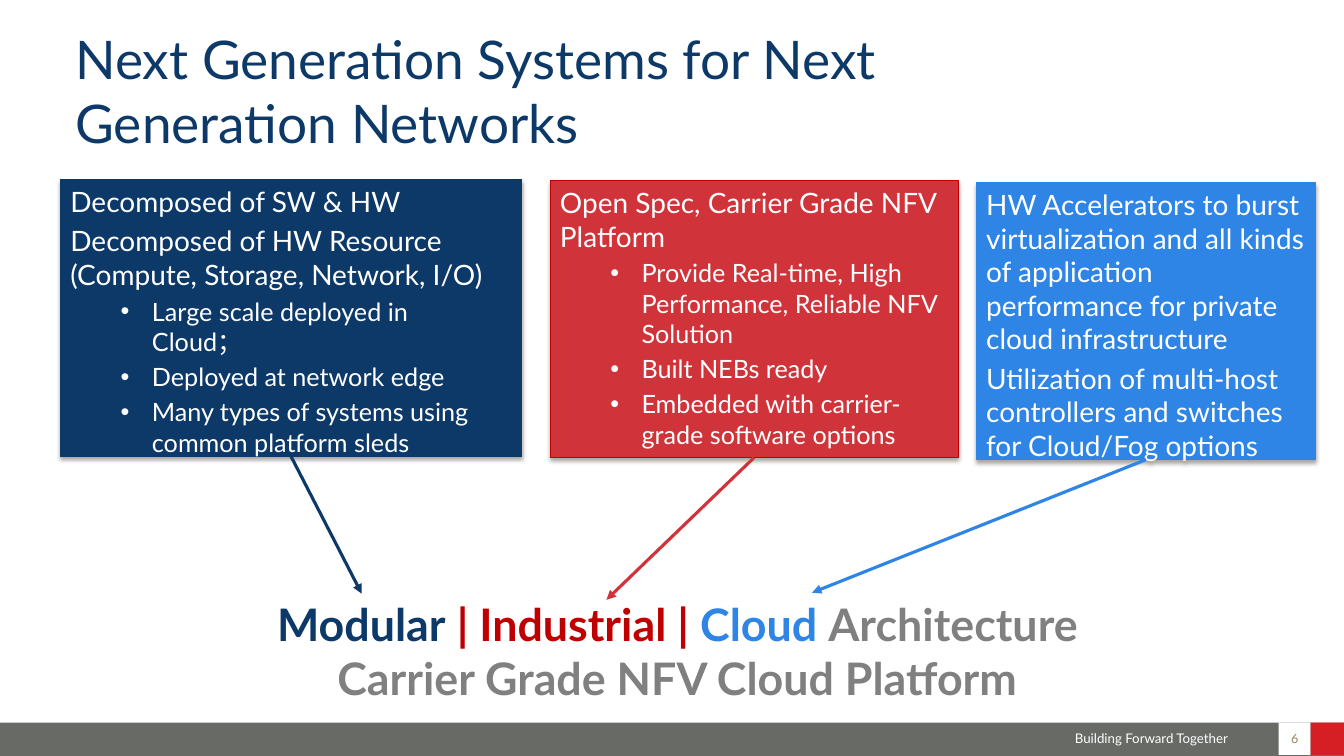
from lxml import etree
from pptx import Presentation
from pptx.dml.color import RGBColor
from pptx.enum.shapes import MSO_CONNECTOR, MSO_SHAPE
from pptx.enum.text import MSO_ANCHOR, PP_ALIGN
from pptx.oxml import parse_xml
from pptx.oxml.ns import nsdecls, qn
from pptx.util import Inches, Pt

LEFT, CENTER = PP_ALIGN.LEFT, PP_ALIGN.CENTER
TOP, MIDDLE = MSO_ANCHOR.TOP, MSO_ANCHOR.MIDDLE
RECTANGLE = MSO_SHAPE.RECTANGLE
STRAIGHT = MSO_CONNECTOR.STRAIGHT
BOTTOM_SIDE = 2

NAVY, RED, BLUE = "0D3969", "D0343A", "2E85E5"
DARK_RED, GRAY, WHITE = "C00000", "808080", "FFFFFF"

PILLARS = [
    dict(box=(0.6, 1.78, 4.58, 2.75), fill=NAVY, outline=NAVY, target=(3.59, 5.89),
         points=["Decomposed of SW & HW",
                 "Decomposed of HW Resource (Compute, Storage, Network, I/O)"],
         details=["Large scale deployed in\nCloud；", "Deployed at network edge",
                  "Many types of systems using common platform sleds"]),
    dict(box=(5.46, 1.79, 4.05, 2.75), fill=RED, outline=DARK_RED, target=(6.02, 5.95),
         points=["Open Spec, Carrier Grade NFV Platform"],
         details=["Provide Real-time, High Performance, Reliable NFV Solution",
                  "Built NEBs ready", "Embedded with carrier-grade software options"]),
    dict(box=(9.69, 1.81, 3.37, 2.75), fill=BLUE, outline=BLUE, target=(8.06, 5.88),
         points=["HW Accelerators to burst virtualization and all kinds of application "
                 "performance for private cloud infrastructure",
                 "Utilization of multi-host controllers and switches for Cloud/Fog options"],
         details=[]),
]


def color(value):
    return RGBColor.from_string(value)


def add_text(paragraph, text, size, fill=WHITE, bold=False, align=LEFT, before=0, bullet=False):
    if bullet:
        paragraph.level = 1
        properties = paragraph._p.get_or_add_pPr()
        properties.set("marL", str(Inches(0.81)))
        properties.set("indent", str(Inches(-0.31)))
        etree.SubElement(properties, qn("a:buFont")).set("typeface", "Arial")
        etree.SubElement(properties, qn("a:buChar")).set("char", "•")
    paragraph.alignment = align
    paragraph.space_before = Pt(before)
    for index, line in enumerate(text.split("\n")):
        if index:
            paragraph.add_line_break()
        run = paragraph.add_run()
        run.text = line
        run.font.name = "Lato"
        run.font.size = Pt(size)
        run.font.bold = bold
        run.font.color.rgb = color(fill)


def add_text_box(slide, box, wrap=True, anchor=TOP, inset=(0.1, 0.05)):
    frame = slide.shapes.add_textbox(*map(Inches, box)).text_frame
    frame.word_wrap = wrap
    frame.vertical_anchor = anchor
    frame.margin_left = frame.margin_right = Inches(inset[0])
    frame.margin_top = frame.margin_bottom = Inches(inset[1])
    return frame


def add_panel(slide, box, fill, outline=None):
    panel = slide.shapes.add_shape(RECTANGLE, *map(Inches, box))
    panel.shadow.inherit = False
    panel.fill.solid()
    panel.fill.fore_color.rgb = color(fill)
    if outline:
        panel.line.color.rgb = color(outline)
        panel.line.width = Pt(0.75)
    else:
        panel.line.fill.background()
    return panel


def add_drop_shadow(panel):
    effects = panel._element.spPr.find(qn("a:effectLst"))
    effects.append(parse_xml(
        f'<a:outerShdw {nsdecls("a")} blurRad="{Pt(3.1)}" dist="{Pt(1.8)}" dir="5400000" '
        'rotWithShape="0"><a:srgbClr val="000000"><a:alpha val="35000"/></a:srgbClr>'
        '</a:outerShdw>'))


def add_arrow(slide, panel, target, fill):
    x, y = map(Inches, target)
    arrow = slide.shapes.add_connector(STRAIGHT, x, y, x, y)
    arrow.begin_connect(panel, BOTTOM_SIDE)
    arrow.line.color.rgb = color(fill)
    arrow.line.width = Pt(2.25)
    etree.SubElement(arrow.line._get_or_add_ln(), qn("a:tailEnd")).set("type", "triangle")
    etree.SubElement(arrow._element.spPr, qn("a:effectLst"))


def add_pillar(slide, box, fill, outline, target, points, details):
    panel = add_panel(slide, box, fill, outline)
    add_drop_shadow(panel)
    frame = panel.text_frame
    frame.word_wrap = True
    frame.vertical_anchor = TOP
    for index, point in enumerate(points):
        paragraph = frame.add_paragraph() if index else frame.paragraphs[0]
        add_text(paragraph, point, 20, before=4 if index else 0)
    for detail in details:
        add_text(frame.add_paragraph(), detail, 18, before=3.6, bullet=True)
    add_arrow(slide, panel, target, fill)


def add_title(slide, box):
    add_text(add_text_box(slide, box).paragraphs[0],
             "Next Generation Systems for Next Generation Networks", 38, NAVY)


def add_summary(slide, box):
    frame = add_text_box(slide, box)
    for words, fill in [("Modular", NAVY), (" | Industrial | ", DARK_RED),
                        ("Cloud ", BLUE), ("Architecture", GRAY)]:
        add_text(frame.paragraphs[0], words, 32, fill, bold=True, align=CENTER)
    add_text(frame.add_paragraph(), "Carrier Grade NFV Cloud Platform", 32, GRAY,
             bold=True, align=CENTER)


def add_footer(slide, box):
    left, top, width, height = box
    tile = 0.32
    accent_left = left + width - tile - 0.01
    number_box = (accent_left - tile, top, tile, tile)
    add_panel(slide, box, "686B65")
    add_panel(slide, number_box, WHITE)
    add_panel(slide, (accent_left, top, tile + 0.01, tile), "D51F25")
    slogan = add_text_box(slide, (left + 10.61, top + 0.04, 1.86, 0.22), wrap=False,
                          inset=(0.06, 0.03))
    add_text(slogan.paragraphs[0], "Building Forward Together", 9.5)
    number = add_text_box(slide, number_box, anchor=MIDDLE, inset=(0.04, 0.02))
    add_text(number.paragraphs[0], "6", 9, "948A54", align=CENTER)


def main():
    presentation = Presentation()
    presentation.slide_width = Inches(13.34)
    presentation.slide_height = Inches(7.5)
    slide = presentation.slides.add_slide(presentation.slide_layouts[6])
    add_footer(slide, (0, 7.17, 13.34, 0.33))
    add_title(slide, (0.65, 0.21, 10, 1.37))
    add_summary(slide, (2.36, 5.87, 8.73, 1.18))
    for pillar in PILLARS:
        add_pillar(slide, **pillar)
    presentation.save("out.pptx")


if __name__ == "__main__":
    main()
